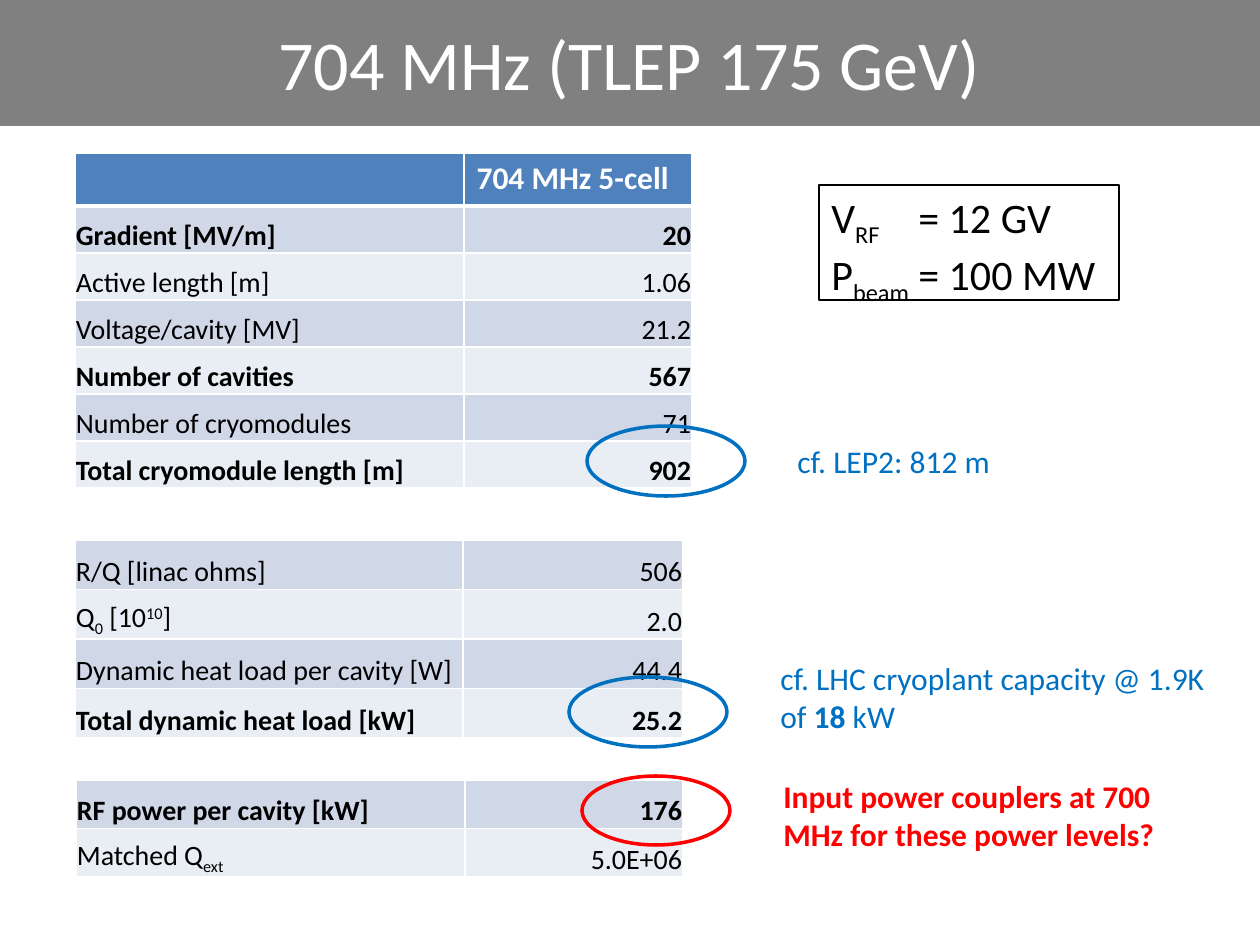
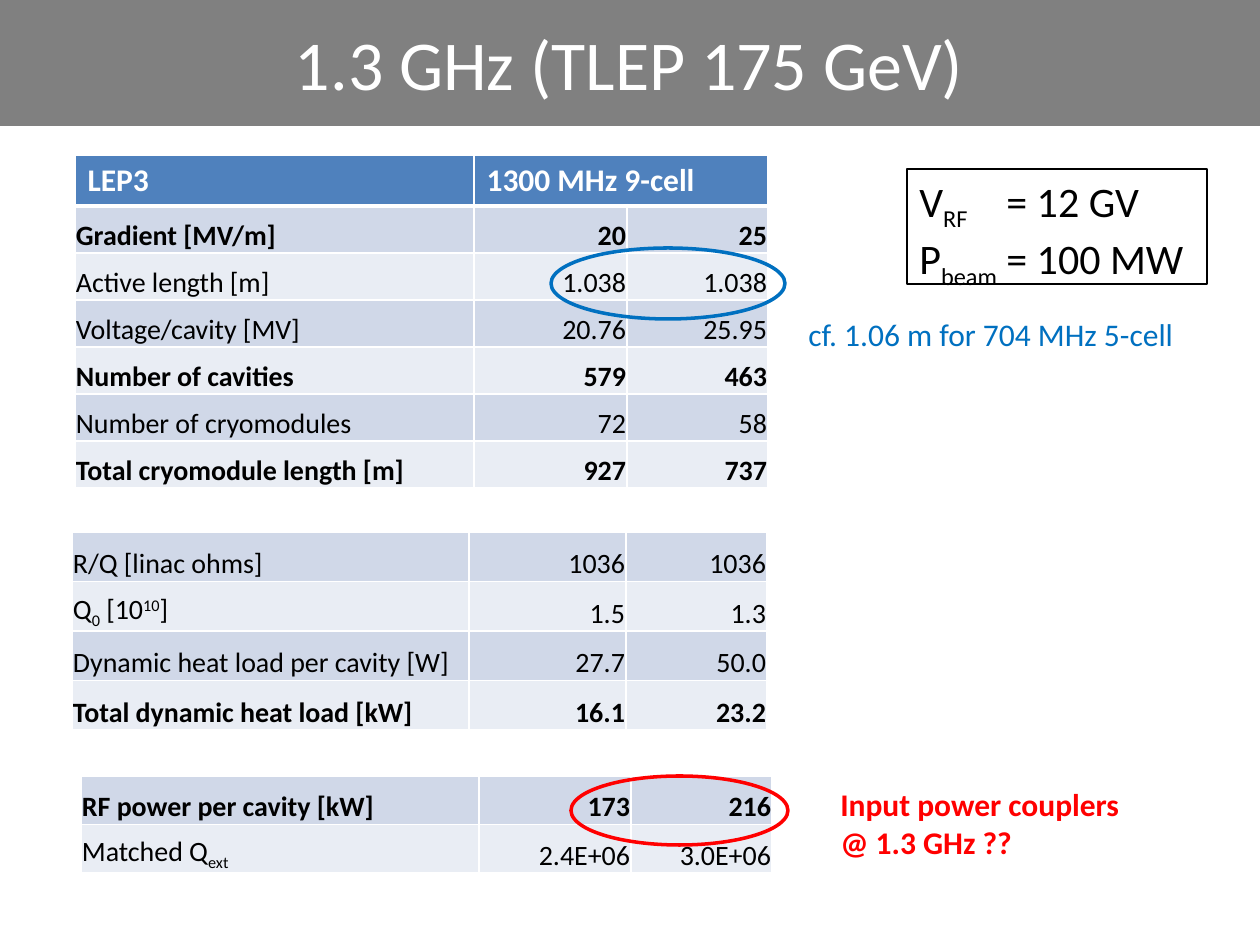
"""Build two slides on cavity options for TLEP at 175 GeV."""
from lxml import etree
from pptx import Presentation
from pptx.dml.color import RGBColor as Rgb
from pptx.enum.shapes import MSO_SHAPE as Kind
from pptx.enum.text import MSO_ANCHOR as Anchor, MSO_AUTO_SIZE as Fit, PP_ALIGN as Align
from pptx.oxml.ns import qn
from pptx.util import Emu, Pt

WHITE = Rgb(0xFF, 0xFF, 0xFF)
BLACK = Rgb(0, 0, 0)
GRAY = Rgb(0x80, 0x80, 0x80)
BLUE = Rgb(0, 0x70, 0xC0)
RED = Rgb(0xFF, 0, 0)
HEAD = Rgb(0x4F, 0x81, 0xBD)
DARK = Rgb(0xD0, 0xD8, 0xE8)
PALE = Rgb(0xE9, 0xED, 0xF4)
FONT = "Calibri"
SHIFT = {"_": "-25000", "^": "30000"}


def px(num):
    """Turn px into EMU."""
    return Emu(round(num * 914400 / 126))


def write(frame, text, size=18, color=BLACK, bold=False, align=Align.LEFT, tab=None):
    """Fill a frame; | splits runs, marked _ low, ^ high or * bold."""
    for num, line in enumerate(text.split("\n")):
        para = frame.add_paragraph() if num else frame.paragraphs[0]
        para.alignment = align
        if tab:
            stops = etree.SubElement(para._p.get_or_add_pPr(), qn("a:tabLst"))
            etree.SubElement(stops, qn("a:tab"), pos=str(px(tab)), algn="l")
        for part in line.split("|"):
            mark = part[0] if part[0] in "_^*" else ""
            run = para.add_run()
            run.text = part[len(mark):]
            font = run.font
            font.name, font.size = FONT, Pt(size)
            font.bold = bold or mark == "*"
            font.color.rgb = color
            if mark in SHIFT:
                run._r.get_or_add_rPr().set("baseline", SHIFT[mark])


def edge(cell, base):
    """Draw white borders on a cell, with the given width at its base."""
    props = cell._tc.get_or_add_tcPr()
    for num, side in enumerate("LRTB"):
        width = base if side == "B" else 1
        line = etree.Element(qn(f"a:ln{side}"), w=str(Pt(width)))
        fill = etree.SubElement(line, qn("a:solidFill"))
        etree.SubElement(fill, qn("a:srgbClr"), val=str(WHITE))
        props.insert(num, line)


class Deck:
    """Hold the style and the current slide."""

    def __init__(self):
        """Start an empty deck."""
        self.prs = Presentation()
        self.prs.slide_width, self.prs.slide_height = px(1260), px(945)
        self.page = self.prs.slide_layouts[5]
        self.slide = None

    def start(self, title):
        """Add a slide with its title."""
        first = self.slide is None
        self.slide = self.prs.slides.add_slide(self.page)
        if first:
            self.band()
        head = self.slide.shapes.title
        head.left, head.top, head.width, head.height = map(px, (123, 0, 1012, 125))
        head.fill.solid()
        head.fill.fore_color.rgb = GRAY
        head.text_frame.vertical_anchor = Anchor.MIDDLE
        write(head.text_frame, title, size=40, color=WHITE, align=Align.CENTER)

    def band(self):
        """Put the gray band on the shared layout."""
        band = self.shape(Kind.RECTANGLE, 0, 0, 1260, 126)
        band.fill.solid()
        band.fill.fore_color.rgb = GRAY
        node = band._element
        node.nvSpPr.cNvPr.set("id", "20")
        self.page.shapes._spTree.insert(2, node)

    def shape(self, kind, *box, color=None, width=2):
        """Add an unfilled shape, outlined if a color is given."""
        item = self.slide.shapes.add_shape(kind, *map(px, box))
        item.shadow.inherit = False
        item.fill.background()
        if color is None:
            item.line.fill.background()
        else:
            item.line.color.rgb = color
            item.line.width = Pt(width)
        return item

    def ring(self, *box, color=BLUE):
        """Circle some values."""
        self.shape(Kind.OVAL, *box, color=color)

    def beam(self, left, top):
        """Add the box of beam data."""
        frame = self.shape(Kind.RECTANGLE, left, top, 300, 115, color=BLACK, width=0.75).text_frame
        frame.word_wrap = True
        frame.vertical_anchor = Anchor.TOP
        write(frame, "V|_RF|\t= 12 GV\nP|_beam|\t= 100 MW", size=24, tab=87)

    def note(self, text, *box, wrap=True, **style):
        """Add a text box."""
        frame = self.slide.shapes.add_textbox(*map(px, box)).text_frame
        frame.word_wrap = wrap
        frame.auto_size = Fit.SHAPE_TO_FIT_TEXT
        write(frame, text, **style)

    def table(self, left, top, cols, tall, rows, head=None, high=0):
        """Add a table of equal rows; a label marked * makes its row bold."""
        every = ([head] if head else []) + rows
        grid = self.slide.shapes.add_table(
            len(every), len(cols), px(left), px(top), px(sum(cols)), px(high + tall)).table
        grid.first_row = grid.horz_banding = False
        for col, wide in zip(grid.columns, cols):
            col.width = px(wide)
        for num, row in enumerate(every):
            top_row = bool(head) and num == 0
            grid.rows[num].height = px(high if top_row else tall / len(rows))
            tint = HEAD if top_row else (DARK, PALE)[(num - bool(head)) % 2]
            for pos in range(len(cols)):
                cell = grid.cell(num, pos)
                cell.fill.solid()
                cell.fill.fore_color.rgb = tint
                edge(cell, 3 if top_row else 1)
                text = row[pos] if pos < len(row) else ""
                if top_row:
                    if text:
                        write(cell.text_frame, text, color=WHITE, bold=True)
                    continue
                cell.vertical_anchor = Anchor.BOTTOM
                cell.margin_left = cell.margin_right = cell.margin_top = px(1)
                cell.margin_bottom = 0
                write(cell.text_frame, text, size=16, bold=row[0][0] == "*",
                      align=Align.RIGHT if pos else Align.LEFT)
        if head and len(head) < len(cols):
            grid.cell(0, len(head) - 1).merge(grid.cell(0, len(cols) - 1))


SIZE = ["*Gradient [MV/m]", "Active length [m]", "Voltage/cavity [MV]",
        "*Number of cavities", "Number of cryomodules", "*Total cryomodule length [m]"]
HEAT = ["R/Q [linac ohms]", "Q|_0| [10|^10|]", "Dynamic heat load per cavity [W]",
        "*Total dynamic heat load [kW]"]
POWER = ["*RF power per cavity [kW]", "Matched Q|_ext"]


def rows(names, *cols):
    """Join labels with columns of values, each a spaced string."""
    return list(zip(names, *(col.split() for col in cols)))


def main():
    """Build and save the deck."""
    deck = Deck()

    deck.start("704 MHz (TLEP 175 GeV)")
    deck.table(75, 153, (389, 228), 282, rows(SIZE, "20 1.06 21.2 567 71 902"),
               head=("", "704 MHz 5-cell"), high=53)
    deck.table(75, 540, (388, 220), 198, rows(HEAT, "506 2.0 44.4 25.2"))
    deck.table(76, 780, (389, 218), 97, rows(POWER, "176 5.0E+06"))
    deck.note("cf. LEP2: 812 m", 785, 436, 219, 50, wrap=False, color=BLUE)
    deck.note("cf. LHC cryoplant capacity @ 1.9K of |*18| kW", 768, 653, 466, 89, color=BLUE)
    deck.note("Input power couplers at 700 MHz for these power levels?",
              771, 771, 417, 89, color=RED, bold=True)
    deck.ring(582, 776, 148, 69, color=RED)
    deck.ring(587, 426, 158, 70)
    deck.ring(569, 677, 158, 70)
    deck.beam(819, 185)

    deck.start("1.3 GHz (TLEP 175 GeV)")
    deck.table(75, 155, (399, 153, 141), 282,
               rows(SIZE, "20 1.038 20.76 579 72 927", "25 1.038 25.95 463 58 737"),
               head=("LEP3", "1300 MHz 9-cell"), high=51)
    deck.table(72, 532, (397, 157, 141), 198,
               rows(HEAT, "1036 1.5 27.7 16.1", "1036 1.3 50.0 23.2"))
    deck.table(81, 776, (398, 152, 141), 97, rows(POWER, "173 2.4E+06", "216 3.0E+06"))
    deck.note("cf. 1.06 m for 704 MHz 5-cell", 796, 309, 394, 50, wrap=False, color=BLUE)
    deck.note("Input power couplers @ 1.3 GHz ??", 828, 779, 330, 89, color=RED, bold=True)
    deck.ring(571, 776, 217, 69, color=RED)
    deck.ring(551, 248, 234, 71)
    deck.beam(907, 169)

    deck.prs.save("out.pptx")


if __name__ == "__main__":
    main()
